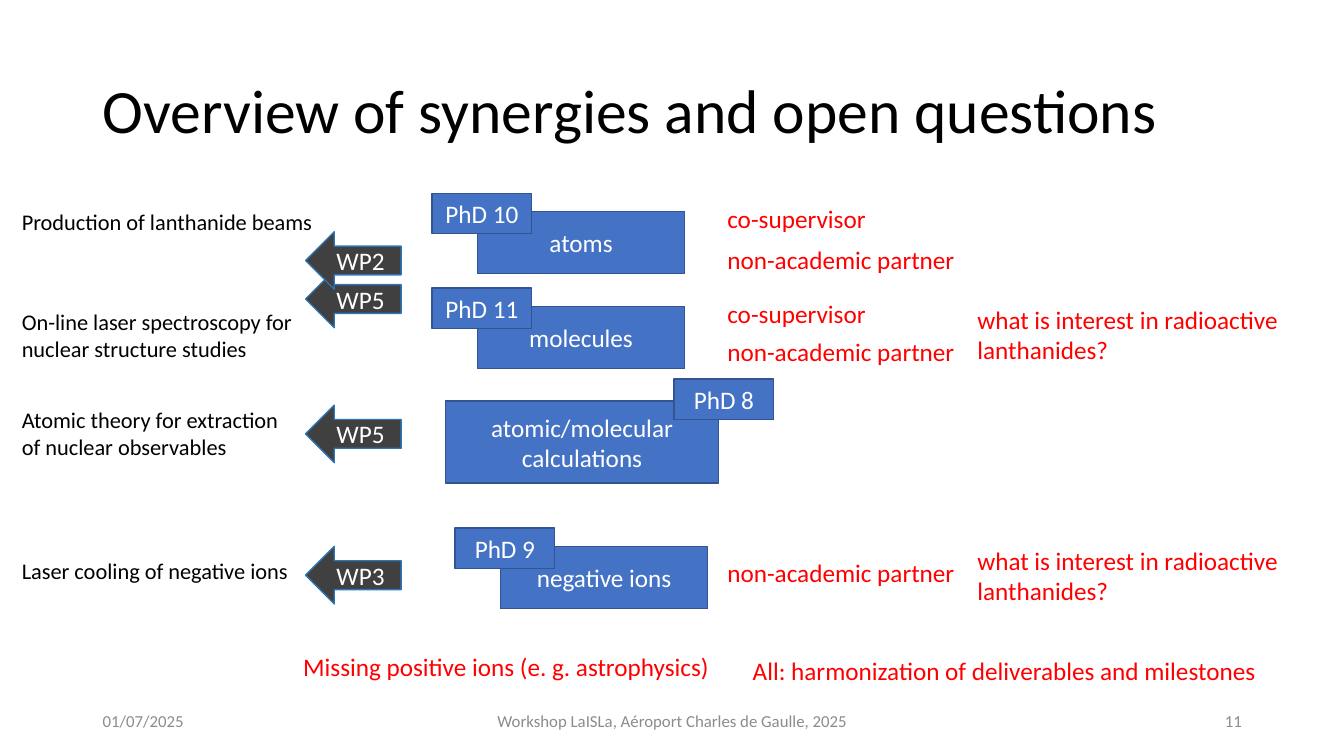
from dataclasses import dataclass
from pptx import Presentation
from pptx.dml.color import RGBColor
from pptx.enum.shapes import MSO_SHAPE
from pptx.enum.text import MSO_ANCHOR, PP_ALIGN
from pptx.util import Cm, Pt


@dataclass(frozen=True)
class Theme:
    font: str = "Calibri"
    ink: str = "000000"
    muted: str = "8C8C8C"
    accent: str = "FF0000"
    white: str = "FFFFFF"
    box: str = "4472C4"
    box_edge: str = "325491"
    arrow: str = "404040"
    arrow_edge: str = "2E75B6"
    title: int = 44
    body: int = 18
    topic: int = 16
    footer: int = 12
    edge: int = 1


THEME = Theme()

TITLE = "Overview of synergies and open questions"
FOOTERS = [
    ("01/07/2025", 2.34, 7.62, PP_ALIGN.LEFT),
    ("Workshop LaISLa, Aéroport Charles de Gaulle, 2025", 11.23, 11.43, PP_ALIGN.CENTER),
    ("11", 23.93, 7.62, PP_ALIGN.RIGHT),
]
TOPICS = [
    ("Production of lanthanide beams", 5.13, 8.28, 0.94),
    ("On-line laser spectroscopy for nuclear structure studies", 7.65, 7.7, 1.63),
    ("Atomic theory for extraction of nuclear observables", 10.11, 7.54, 1.63),
    ("Laser cooling of negative ions", 13.92, 7.87, 0.94),
]
WORK_PACKAGES = [("WP5", 10.21), ("WP5", 6.81), ("WP2", 5.84), ("WP3", 13.77)]

SMALL, LARGE = (5.21, 1.57), (6.88, 2.06)
TAG_LEFT, TAG_RIGHT = (-1.15, -0.46), (5.76, -0.56)
PROJECTS = [
    ("atomic/molecular calculations", "PhD 8", (11.23, 10.11), LARGE, TAG_RIGHT),
    ("atoms", "PhD 10", (12.04, 5.33), SMALL, TAG_LEFT),
    ("negative ions", "PhD 9", (12.62, 13.77), SMALL, TAG_LEFT),
    ("molecules", "PhD 11", (12.04, 7.72), SMALL, TAG_LEFT),
]

SUPERVISOR = ("co-supervisor", 4.04)
PARTNER = ("non-academic partner", 6.3)
NEEDS = [
    (SUPERVISOR, 5.0),
    (PARTNER, 6.02),
    (SUPERVISOR, 7.39),
    (PARTNER, 8.36),
    (PARTNER, 13.92),
]
QUESTION = "what is interest in radioactive lanthanides?"
QUESTION_TOPS = [7.54, 13.61]
REMARKS = [
    ("Missing positive ions (e. g. astrophysics)", 7.39, 16.28, 10.85),
    ("All: harmonization of deliverables and milestones", 18.72, 16.38, 13.54),
]

TOPIC_LEFT, ARROW_LEFT, NEED_LEFT, QUESTION_LEFT = 0.3, 7.7, 18.08, 24.38
ARROW_SIZE, TAG_SIZE = (2.41, 1.45), (2.51, 1.02)
LINE_HEIGHT = 1.02


def write(shape, text, size, color, align=PP_ALIGN.LEFT, anchor=MSO_ANCHOR.TOP, wrap=True):
    frame = shape.text_frame
    for name, value in {"word_wrap": wrap, "vertical_anchor": anchor}.items():
        setattr(frame, name, value)
    paragraph = frame.paragraphs[0]
    paragraph.alignment = align
    run = paragraph.add_run()
    run.text = text
    for name, value in {"name": THEME.font, "size": Pt(size)}.items():
        setattr(run.font, name, value)
    run.font.color.rgb = RGBColor.from_string(color)
    return paragraph


def add_label(slide, area, text, size, color, **layout):
    label = slide.shapes.add_textbox(*map(Cm, area))
    return write(label, text, size, color, **layout)


def add_block(shapes, kind, area, text, fill, edge, anchor=MSO_ANCHOR.MIDDLE):
    block = shapes.add_shape(kind, *map(Cm, area))
    block.shadow.inherit = False
    block.fill.solid()
    block.fill.fore_color.rgb = RGBColor.from_string(fill)
    block.line.color.rgb = RGBColor.from_string(edge)
    block.line.width = Pt(THEME.edge)
    write(block, text, THEME.body, THEME.white, PP_ALIGN.CENTER, anchor)


def add_project(slide, topic, phd, corner, size, tag_offset):
    shapes = slide.shapes.add_group_shape().shapes
    tag_corner = [start + shift for start, shift in zip(corner, tag_offset)]
    colors = (THEME.box, THEME.box_edge)
    add_block(shapes, MSO_SHAPE.RECTANGLE, (*corner, *size), topic, *colors)
    add_block(shapes, MSO_SHAPE.RECTANGLE, (*tag_corner, *TAG_SIZE), phd, *colors,
              anchor=MSO_ANCHOR.TOP)


def main():
    deck = Presentation()
    deck.slide_width, deck.slide_height = Cm(33.87), Cm(19.05)
    slide = deck.slides.add_slide(deck.slide_layouts[6])

    heading = add_label(slide, (2.34, 1.02, 29.21, 3.68), TITLE, THEME.title, THEME.ink,
                        anchor=MSO_ANCHOR.MIDDLE)
    heading.line_spacing = 0.9
    for text, left, width, align in FOOTERS:
        add_label(slide, (left, 17.65, width, LINE_HEIGHT), text, THEME.footer, THEME.muted,
                  align=align, anchor=MSO_ANCHOR.MIDDLE)

    for project in PROJECTS:
        add_project(slide, *project)
    for text, top in WORK_PACKAGES:
        add_block(slide.shapes, MSO_SHAPE.LEFT_ARROW, (ARROW_LEFT, top, *ARROW_SIZE), text,
                  THEME.arrow, THEME.arrow_edge)
    for text, top, width, height in TOPICS:
        add_label(slide, (TOPIC_LEFT, top, width, height), text, THEME.topic, THEME.ink)

    needs = [(text, NEED_LEFT, top, width) for (text, width), top in NEEDS]
    for text, left, top, width in needs + REMARKS:
        add_label(slide, (left, top, width, LINE_HEIGHT), text, THEME.body, THEME.accent,
                  wrap=False)
    for top in QUESTION_TOPS:
        add_label(slide, (QUESTION_LEFT, top, 8.15, 1.8), QUESTION, THEME.body, THEME.accent)

    deck.save("out.pptx")


if __name__ == "__main__":
    main()
